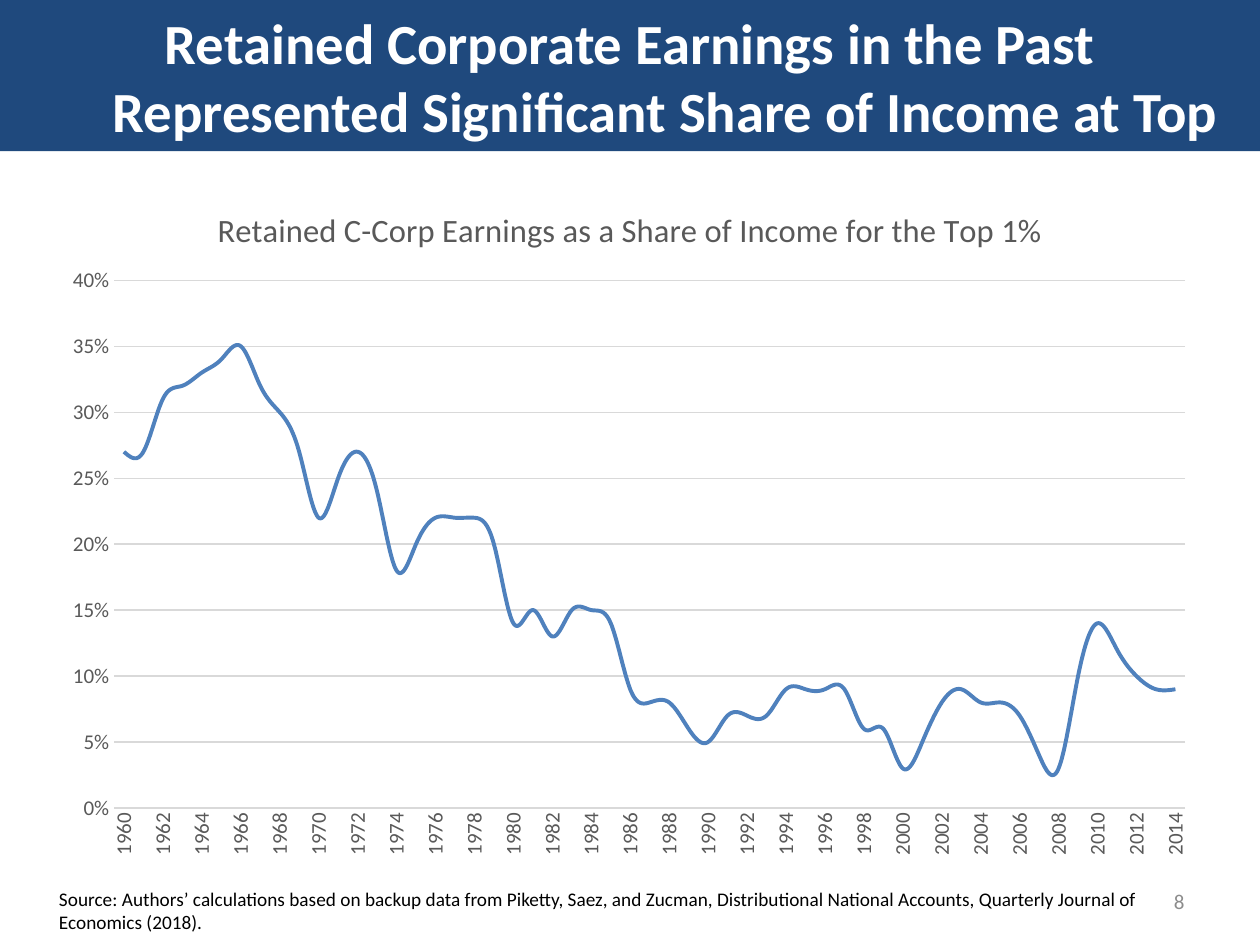
import pptx
import pptx.chart.data
import pptx.dml.color
import pptx.enum.chart
import pptx.enum.text
import pptx.oxml
import pptx.oxml.ns
import pptx.util

WIDTH, HEIGHT = 10, 7.5
FONT = "Calibri"
NAVY, BLUE, WHITE, BLACK = "1F497D", "4F81BD", "FFFFFF", "000000"
LABEL_GRAY, GRID_GRAY, NUMBER_GRAY = "595959", "D9D9D9", "8C8C8C"
ALIGN = pptx.enum.text.PP_ALIGN
ANCHOR = pptx.enum.text.MSO_ANCHOR

FIRST_YEAR = 1960
# Percent of income, one value a year
SHARES = [
    27, 27, 31, 32, 33, 34, 35, 32, 30, 27,
    22, 25, 27, 24, 18, 20, 22, 22, 22, 20,
    14, 15, 13, 15, 15, 14, 9, 8, 8, 6,
    5, 7, 7, 7, 9, 9, 9, 9, 6, 6,
    3, 5, 8, 9, 8, 8, 7, 4, 3, 10,
    14, 12, 10, 9, 9,
]


def color(hex_code):
    return pptx.dml.color.RGBColor.from_string(hex_code)


def box(left, top, width, height):
    return [pptx.util.Inches(length) for length in (left, top, width, height)]


def style_font(font, size, hex_code, bold=False):
    font.name, font.size, font.bold = FONT, pptx.util.Pt(size), bold
    font.color.rgb = color(hex_code)


def style_line(line, hex_code, width):
    line.color.rgb = color(hex_code)
    line.width = pptx.util.Pt(width)


def write(frame, text, size, hex_code, align, anchor, bold=False):
    frame.word_wrap = True
    frame.auto_size = pptx.enum.text.MSO_AUTO_SIZE.NONE
    frame.vertical_anchor = anchor
    paragraph = frame.paragraphs[0]
    paragraph.alignment = align
    run = paragraph.add_run()
    run.text = text
    style_font(run.font, size, hex_code, bold)
    return paragraph


def add_title(slide, text):
    banner = slide.shapes.title
    banner.left, banner.top, banner.width, banner.height = box(0, 0, WIDTH, 0.16 * HEIGHT)
    banner.fill.solid()
    banner.fill.fore_color.rgb = color(NAVY)
    paragraph = write(banner.text_frame, text, 32.4, WHITE, ALIGN.CENTER, ANCHOR.MIDDLE, True)
    hanging = pptx.util.Inches(0.56)
    properties = paragraph._p.get_or_add_pPr()
    properties.set("marL", str(hanging))
    properties.set("indent", str(-hanging))


def add_note(slide, place, text, size, hex_code, align, anchor):
    note = slide.shapes.add_textbox(*box(*place))
    write(note.text_frame, text, size, hex_code, align, anchor)


def manual_layout(target=None, **shares):
    """Build a c:layout from shares of the chart's size (x, y and, for a plot, w, h)."""
    inner = f'<c:layoutTarget val="{target}"/>' if target else ""
    inner += '<c:xMode val="edge"/><c:yMode val="edge"/>'
    inner += "".join(f'<c:{key} val="{share}"/>' for key, share in shares.items())
    return pptx.oxml.parse_xml(
        f'<c:layout {pptx.oxml.ns.nsdecls("c")}><c:manualLayout>{inner}</c:manualLayout></c:layout>'
    )


def place_layout(parent, layout, after=None):
    for old in parent.findall(pptx.oxml.ns.qn("c:layout")):
        parent.remove(old)
    if after is None:
        parent.insert(0, layout)
    else:
        after.addnext(layout)


def style_axis(axis):
    axis.major_tick_mark = axis.minor_tick_mark = pptx.enum.chart.XL_TICK_MARK.NONE
    style_font(axis.tick_labels.font, 12, LABEL_GRAY)


def style_year_axis(axis):
    style_axis(axis)
    style_line(axis.format.line, GRID_GRAY, 0.75)
    body = axis._element.txPr.find(pptx.oxml.ns.qn("a:bodyPr"))
    body.set("rot", "-5400000")
    body.set("vert", "horz")
    skip = pptx.oxml.parse_xml(f'<c:tickLblSkip {pptx.oxml.ns.nsdecls("c")} val="2"/>')
    axis._element.find(pptx.oxml.ns.qn("c:noMultiLvlLbl")).addprevious(skip)


def style_share_axis(axis):
    style_axis(axis)
    axis.minimum_scale, axis.maximum_scale, axis.major_unit = 0, 0.4, 0.05
    axis.tick_labels.number_format = "0%"
    axis.tick_labels.number_format_is_linked = False
    axis.format.line.fill.background()
    axis.has_major_gridlines = True
    style_line(axis.major_gridlines.format.line, GRID_GRAY, 0.75)


def add_earnings_chart(slide, place, heading):
    data = pptx.chart.data.CategoryChartData(number_format="0%")
    data.categories = [str(FIRST_YEAR + i) for i in range(len(SHARES))]
    data.add_series("Series 1", [share / 100 for share in SHARES])
    chart = slide.shapes.add_chart(
        pptx.enum.chart.XL_CHART_TYPE.LINE, *box(*place), data
    ).chart
    chart.has_legend = False
    style_font(chart.font, 10, BLACK)
    chart.plots[0].vary_by_categories = False

    chart.has_title = True
    run = chart.chart_title.text_frame.paragraphs[0].add_run()
    run.text = heading
    style_font(run.font, 18.6, LABEL_GRAY)
    title = chart.chart_title._element
    place_layout(title, manual_layout(x=0.14, y=0.04), title.find(pptx.oxml.ns.qn("c:tx")))
    chart.chart_title.include_in_layout = False
    plot_area = chart._chartSpace.chart.plotArea
    place_layout(plot_area, manual_layout("inner", x=0.056, y=0.153, w=0.922, h=0.759))

    style_year_axis(chart.category_axis)
    style_share_axis(chart.value_axis)
    earnings = chart.plots[0].series[0]
    earnings.smooth = True
    style_line(earnings.format.line, BLUE, 2.25)


def main():
    deck = pptx.Presentation()
    deck.slide_width = pptx.util.Inches(WIDTH)
    deck.slide_height = pptx.util.Inches(HEIGHT)
    slide = deck.slides.add_slide(deck.slide_layouts.get_by_name("Title Only"))

    add_title(slide, "Retained Corporate Earnings in the Past "
                     "Represented Significant Share of Income at Top")
    add_earnings_chart(slide, (0.39, 1.38, 9.22, 5.52),
                       "Retained C-Corp Earnings as a Share of Income for the Top 1%")
    add_note(slide, (7.17, 6.95, 2.33, 0.4), "8", 12, NUMBER_GRAY, ALIGN.RIGHT, ANCHOR.MIDDLE)
    add_note(slide, (0.37, 6.99, 9.13, 0.47),
             "Source: Authors’ calculations based on backup data from Piketty, Saez, and Zucman, "
             "Distributional National Accounts, Quarterly Journal of Economics (2018).",
             11, BLACK, ALIGN.LEFT, ANCHOR.TOP)
    deck.save("out.pptx")


if __name__ == "__main__":
    main()
